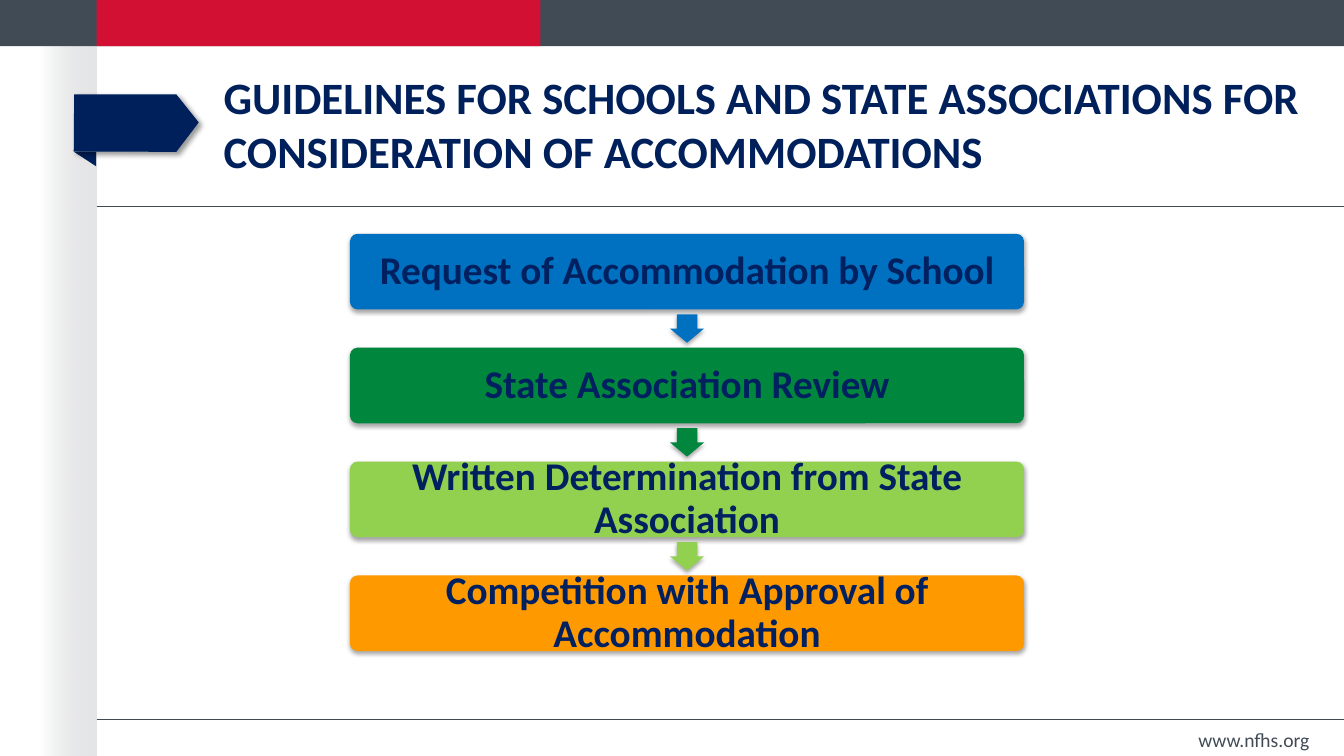
from lxml import etree
from pptx import Presentation
from pptx import util as u
from pptx.dml.color import RGBColor
from pptx.enum import shapes, text
from pptx.oxml.ns import qn

Pt = u.Pt
SHAPE = shapes.MSO_SHAPE
ALIGN = text.PP_ALIGN
COLORS = {
    "slate": "414B56", "red": "D21034", "navy": "00205B", "ink": "002060",
    "fade": "C8C9CC", "gray": "E4E5E6", "blue": "0070C0",
    "green": "00863D", "lime": "92D050", "orange": "FF9900",
}
STEPS = [
    ("Request of Accommodation by School", "blue"),
    ("State Association Review", "green"),
    ("Written Determination from State Association", "lime"),
    ("Competition with Approval of Accommodation", "orange"),
]
RIBBON_SHADOW = dict(opacity=40, blur=4, dist=3, angle=45)
STEP_SHADOW = dict(opacity=35, blur=3.1, dist=1.8, angle=90)


def rgb(name):
    return RGBColor.from_string(COLORS[name])


class Deck:
    def __init__(self, slide, font="Calibri"):
        self.s, self.font = slide, font

    def finish(self, sp, color, shadow=None):
        """Apply a plain fill, no outline and an optional outer shadow."""
        sp.fill.solid()
        sp.fill.fore_color.rgb = rgb(color)
        sp.line.fill.background()
        sp.shadow.inherit = False
        if shadow:
            effects = sp._element.spPr.find(qn("a:effectLst"))
            outer = etree.SubElement(
                effects, qn("a:outerShdw"), blurRad=str(Pt(shadow["blur"])),
                dist=str(Pt(shadow["dist"])), dir=str(shadow["angle"] * 60000),
                algn="ctr", rotWithShape="0")
            black = etree.SubElement(outer, qn("a:srgbClr"), val="000000")
            etree.SubElement(black, qn("a:alpha"), val=str(shadow["opacity"] * 1000))
        return sp

    def shape(self, kind, x, y, w, h, color, shadow=None, adj=()):
        sp = self.s.shapes.add_shape(kind, Pt(x), Pt(y), Pt(w), Pt(h))
        for i, value in enumerate(adj):
            sp.adjustments[i] = value
        return self.finish(sp, color, shadow)

    def fade(self, x, y, w, h):
        """Draw a band that goes from clear on the left to gray on the right."""
        sp = self.shape(SHAPE.RECTANGLE, x, y, w, h, "gray")
        sp.fill.gradient()
        sp.fill.gradient_angle = 0
        for stop, color in zip(sp.fill.gradient_stops, ("fade", "gray")):
            stop.color.rgb = rgb(color)
        clear = sp._element.spPr.find(".//" + qn("a:srgbClr"))
        etree.SubElement(clear, qn("a:alpha"), val="0")

    def polygon(self, points, color, shadow=None):
        start, *rest = [(Pt(x), Pt(y)) for x, y in points]
        builder = self.s.shapes.build_freeform(*start)
        builder.add_line_segments(rest, close=True)
        self.finish(builder.convert_to_shape(), color, shadow)

    def rule(self, x1, x2, y):
        line = self.s.shapes.add_connector(
            shapes.MSO_CONNECTOR.STRAIGHT, Pt(x1), Pt(y), Pt(x2), Pt(y))
        line.line.color.rgb = rgb("slate")
        line.line.width = Pt(1)
        etree.SubElement(line._element.spPr, qn("a:effectLst"))

    def label(self, sp, words, size, color, align, bold=False, spacing=None, inset=None):
        tf = sp.text_frame
        tf.word_wrap = True
        tf.vertical_anchor = text.MSO_ANCHOR.MIDDLE
        if inset is not None:
            tf.margin_left = tf.margin_right = Pt(inset)
            tf.margin_top = tf.margin_bottom = Pt(inset)
        p = tf.paragraphs[0]
        p.alignment = align
        if spacing is not None:
            p.line_spacing = spacing
        r = p.add_run()
        r.text = words
        r.font.name, r.font.size, r.font.bold = self.font, Pt(size), bold
        r.font.color.rgb = rgb(color)

    def textbox(self, x, y, w, h, *args, **style):
        sp = self.s.shapes.add_textbox(Pt(x), Pt(y), Pt(w), Pt(h))
        self.label(sp, *args, **style)


def main():
    prs = Presentation()
    prs.slide_width, prs.slide_height = Pt(960), Pt(540)
    deck = Deck(prs.slides.add_slide(prs.slide_layouts[6]))

    deck.fade(29, 32.5, 40.3, 507.5)
    deck.shape(SHAPE.RECTANGLE, 0, 0, 960, 33, "slate")
    deck.shape(SHAPE.RECTANGLE, 69, 0, 317, 33, "red")
    for y in (147.5, 514):
        deck.rule(69, 960, y)

    deck.polygon([(53, 108.5), (68.7, 108.5), (68.7, 118.8)], "navy")
    deck.polygon([(53, 67.5), (52.7, 108.3), (126, 108.5), (142, 87.5), (126, 67.5)],
                 "navy", RIBBON_SHADOW)

    deck.textbox(152.6, 41, 790, 95,
                 "GUIDELINES FOR SCHOOLS AND STATE ASSOCIATIONS FOR "
                 "CONSIDERATION OF ACCOMMODATIONS",
                 32, "navy", ALIGN.LEFT, bold=True, spacing=Pt(38))
    deck.textbox(785.5, 517, 157, 23, "www.nfhs.org", 14, "slate", ALIGN.RIGHT)

    left, top, width, height, pitch = 250, 167, 481.5, 54, 81.35
    arrow_w, arrow_h = 24.4, 20.3
    arrow_x = left + (width - arrow_w) / 2
    arrow_gap = (pitch - height - arrow_h) / 2
    for i, (step, color) in enumerate(STEPS):
        y = top + i * pitch
        box = deck.shape(SHAPE.ROUNDED_RECTANGLE, left, y, width, height, color,
                         STEP_SHADOW, [0.1])
        deck.label(box, step, 28, "ink", ALIGN.CENTER, bold=True, spacing=0.9, inset=10)
        if i < len(STEPS) - 1:
            deck.shape(SHAPE.DOWN_ARROW, arrow_x, y + height + arrow_gap,
                       arrow_w, arrow_h, color, STEP_SHADOW, [0.6, 0.5])

    prs.save("out.pptx")


if __name__ == "__main__":
    main()
